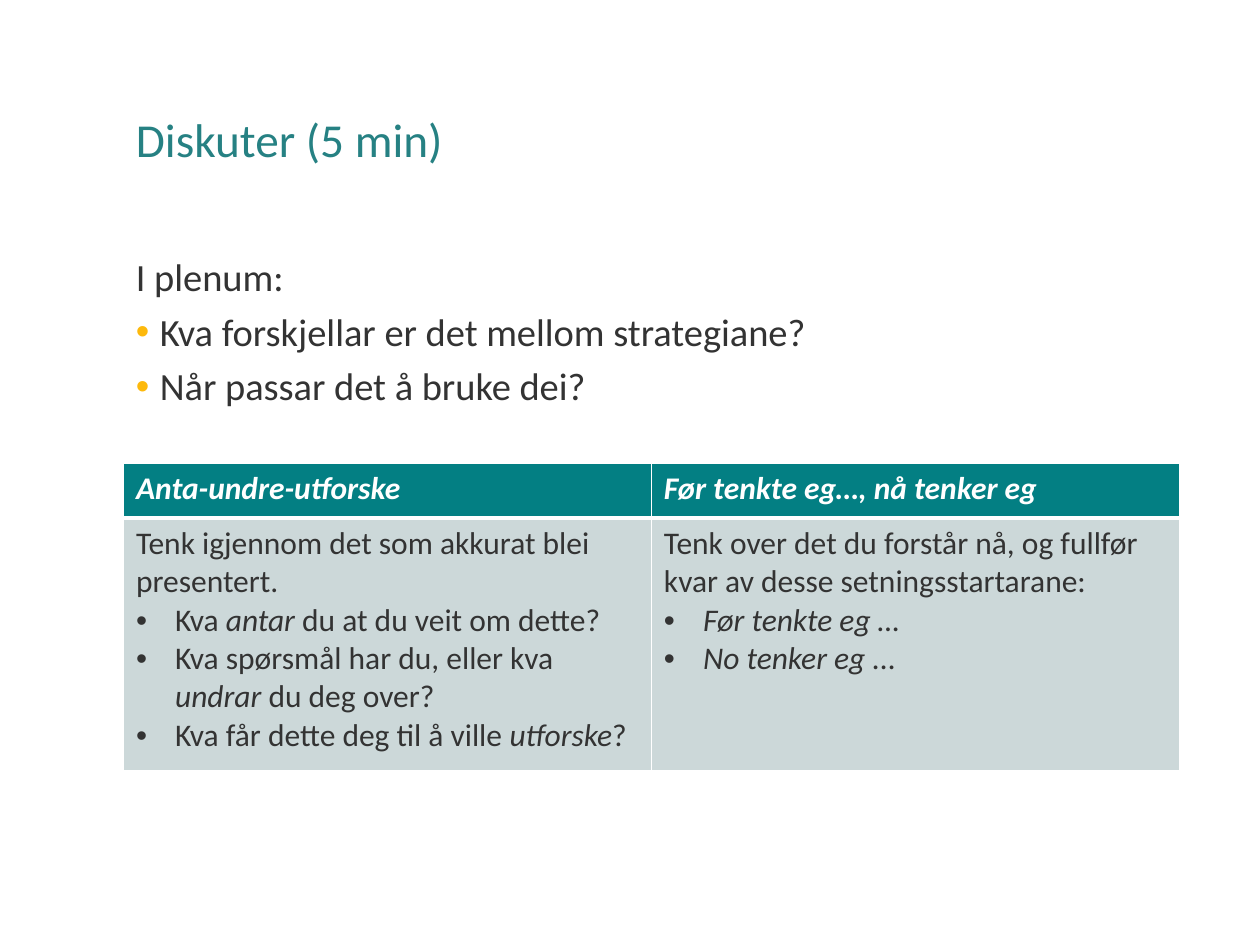
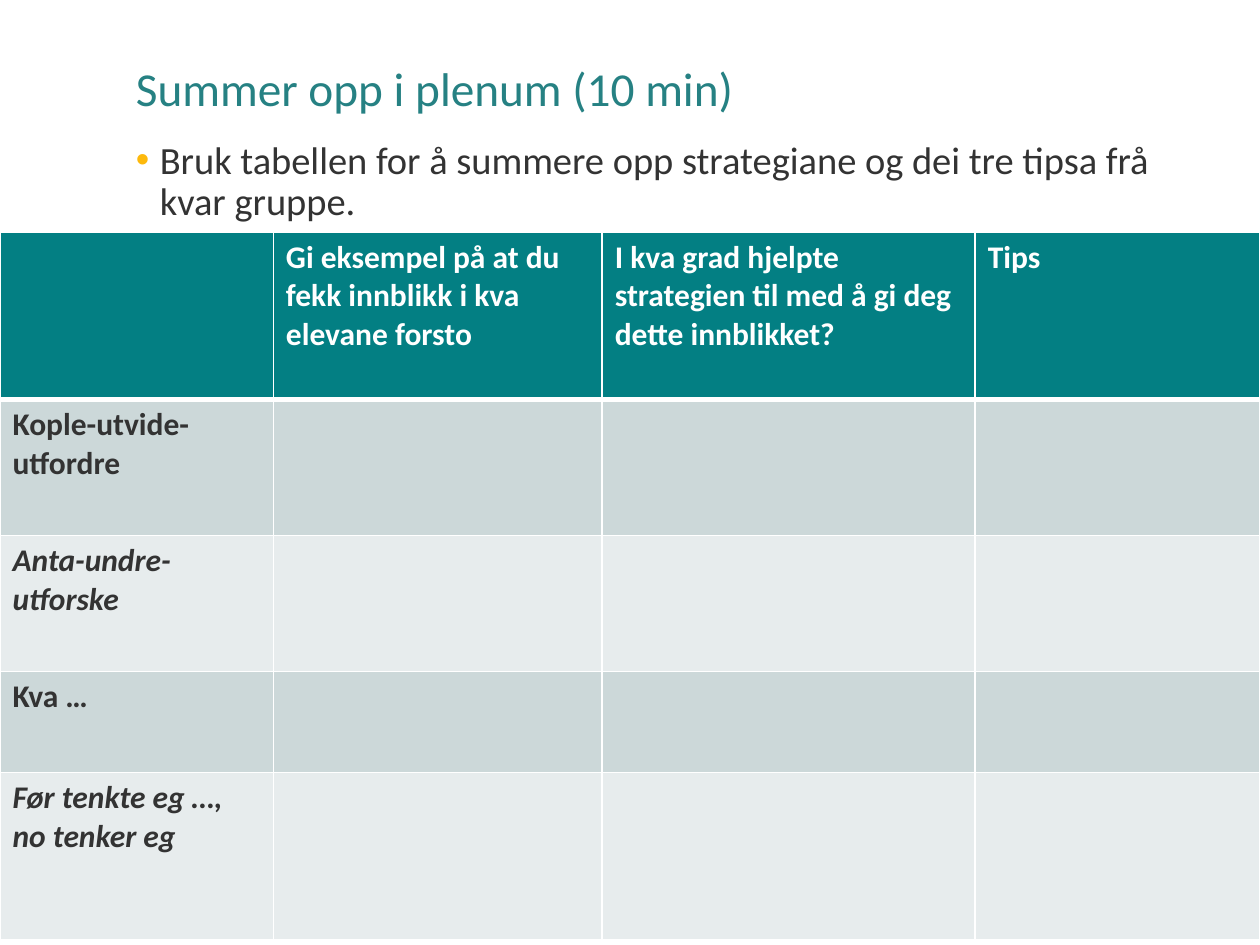
from dataclasses import dataclass

from lxml import etree
from pptx import Presentation
from pptx.dml.color import RGBColor
from pptx.enum import text
from pptx.oxml import ns
from pptx.util import Inches, Pt


@dataclass(frozen=True)
class Theme:
    font: str = "Calibri"
    title: str = "268183"
    ink: str = "333333"
    white: str = "FFFFFF"
    bullet: str = "FDB90C"
    header: str = "037F83"
    bands: tuple = ("CCD8D9", "E7ECED")
    title_size: float = 27
    body_size: float = 22
    table_size: float = 18
    body_gap: float = 7.5
    thin_border: float = 1
    thick_border: float = 3


THEME = Theme()
LEFT, TEXT_WIDTH = 0.98, 8.29


def add_element(parent, tag, **attributes):
    return etree.SubElement(parent, ns.qn(tag), attributes)


def add_bullet(para, indent, color):
    properties = para._p.get_or_add_pPr()
    properties.set("marL", str(Inches(indent)))
    properties.set("indent", str(-Inches(indent)))
    bullet_color = add_element(properties, "a:buClr")
    add_element(bullet_color, "a:srgbClr", val=color)
    add_element(properties, "a:buFont", typeface="Arial")
    add_element(properties, "a:buChar", char="•")


def style_font(para, size, color, bold=False, italic=None):
    font = para.font
    font.name = THEME.font
    font.size = Pt(size)
    font.color.rgb = RGBColor.from_string(color)
    font.bold = bold
    font.italic = italic


def write_paragraphs(frame, lines, size, color, indent, bullet_color, bold=False,
                     spacing=None, gap=None):
    """Fill a frame; "- " starts a bulleted line and *stars* enclose italics."""
    for number, line in enumerate(lines):
        para = frame.paragraphs[0] if number == 0 else frame.add_paragraph()
        if line.startswith("- "):
            add_bullet(para, indent, bullet_color)
            line = line[2:]
        if spacing:
            para.line_spacing = spacing
        if gap and number:
            para.space_before = Pt(gap)
        pieces = line.split("*")
        spans = [(piece, odd % 2 == 1) for odd, piece in enumerate(pieces) if piece]
        uniform = len(spans) == 1
        style_font(para, size, color, bold, spans[0][1] if uniform else None)
        for piece, italic in spans:
            span = para.add_run()
            span.text = piece
            if not uniform:
                span.font.italic = italic


def add_text(page, top, height, lines, size, color, anchor):
    box = page.shapes.add_textbox(Inches(LEFT), Inches(top),
                                  Inches(TEXT_WIDTH), Inches(height))
    frame = box.text_frame
    frame.word_wrap = True
    frame.vertical_anchor = anchor
    write_paragraphs(frame, lines, size, color, 0.19, THEME.bullet,
                     spacing=0.9, gap=THEME.body_gap)


def add_title(page, top, title):
    add_text(page, top, 1.45, [title], THEME.title_size, THEME.title,
             text.MSO_ANCHOR.MIDDLE)


def add_body(page, top, lines):
    add_text(page, top, 4.57, lines, THEME.body_size, THEME.ink,
             text.MSO_ANCHOR.TOP)


def set_borders(cell, top, bottom):
    properties = cell._tc.get_or_add_tcPr()
    widths = {"L": THEME.thin_border, "R": THEME.thin_border, "T": top, "B": bottom}
    for side, width in widths.items():
        line = add_element(properties, f"a:ln{side}", w=str(Pt(width)))
        fill = add_element(line, "a:solidFill")
        add_element(fill, "a:srgbClr", val=THEME.white)


def add_table(page, left, top, widths, heights, rows, bold_first_column=False):
    """Each cell is a list of lines; cells missing at the end of a row stay empty."""
    frame = page.shapes.add_table(len(heights), len(widths), Inches(left), Inches(top),
                                  Inches(sum(widths)), Inches(sum(heights)))
    table = frame.table
    table.horz_banding = False
    for column, width in zip(table.columns, widths):
        column.width = Inches(width)
    for row_index, (row, height) in enumerate(zip(table.rows, heights)):
        row.height = Inches(height)
        is_header = row_index == 0
        color = THEME.white if is_header else THEME.ink
        fill = THEME.header if is_header else THEME.bands[(row_index - 1) % 2]
        above = THEME.thick_border if row_index == 1 else THEME.thin_border
        below = THEME.thick_border if is_header else THEME.thin_border
        contents = rows[row_index]
        for column_index, cell in enumerate(row.cells):
            set_borders(cell, above, below)
            cell.fill.solid()
            cell.fill.fore_color.rgb = RGBColor.from_string(fill)
            lines = contents[column_index] if column_index < len(contents) else []
            bold = is_header or (bold_first_column and column_index == 0)
            write_paragraphs(cell.text_frame, lines, THEME.table_size, color,
                             0.31, color, bold)


def build_discussion(page):
    add_title(page, 0.4, "Diskuter (5 min)")
    add_body(page, 2, [
        "I plenum:",
        "- Kva forskjellar er det mellom strategiane?",
        "- Når passar det å bruke dei?",
    ])
    assume_wonder_explore = [
        "Tenk igjennom det som akkurat blei presentert.",
        "- Kva *antar* du at du veit om dette?",
        "- Kva spørsmål har du, eller kva *undrar* du deg over?",
        "- Kva får dette deg til å ville *utforske*?",
    ]
    before_and_now = [
        "Tenk over det du forstår nå, og fullfør kvar av desse setningsstartarane:",
        "- *Før tenkte eg …*",
        "- *No tenker eg ...*",
    ]
    add_table(page, LEFT, 3.68, [4.19] * 2, [0.43, 2.01], [
        [["*Anta-undre-utforske*"], ["*Før tenkte eg…, nå tenker eg*"]],
        [assume_wonder_explore, before_and_now],
    ])


def build_summary(page):
    add_title(page, 0, "Summer opp i plenum (10 min)")
    add_body(page, 1.07, [
        "- Bruk tabellen for å summere opp strategiane og dei tre tipsa frå kvar gruppe.",
    ])
    headings = [
        [],
        ["Gi eksempel på at du fekk innblikk i kva elevane forsto"],
        ["I kva grad hjelpte strategien til med å gi deg dette innblikket?"],
        ["Tips"],
    ]
    strategies = ["Kople-utvide-utfordre", "*Anta-undre-utforske*", "Kva …",
                  "*Før tenkte eg …, no tenker eg*"]
    add_table(page, 0, 1.84, [2.17, 2.61, 2.96, 2.26], [1.33, 1.08, 1.08, 0.8, 1.33],
              [headings] + [[[strategy]] for strategy in strategies],
              bold_first_column=True)


def main():
    deck = Presentation()
    deck.slide_width, deck.slide_height = Inches(10), Inches(7.5)
    blank = deck.slide_layouts[6]
    for build in (build_discussion, build_summary):
        build(deck.slides.add_slide(blank))
    deck.save("out.pptx")


if __name__ == "__main__":
    main()
